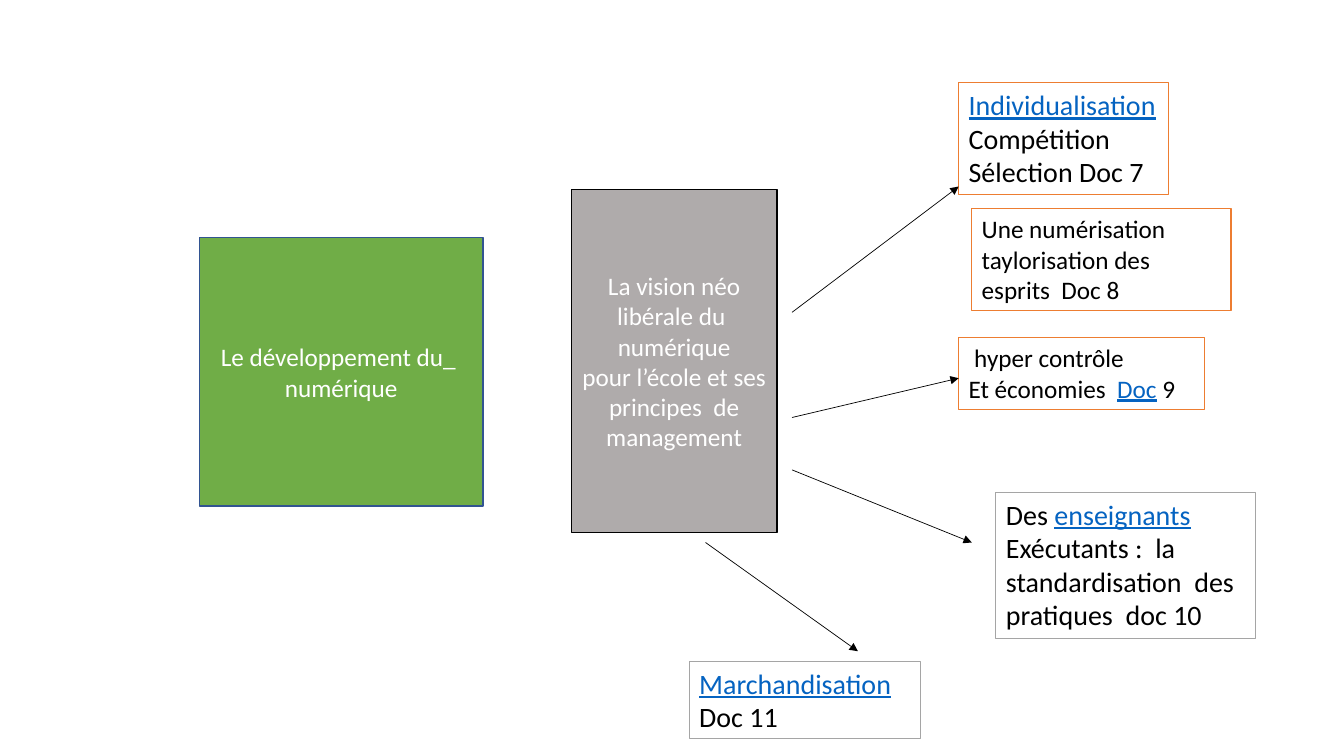
from dataclasses import dataclass
from typing import NamedTuple

from lxml.etree import SubElement
from pptx import Presentation
from pptx.dml.color import RGBColor
from pptx.enum.shapes import MSO_CONNECTOR, MSO_SHAPE
from pptx.enum.text import MSO_ANCHOR, MSO_AUTO_SIZE, PP_ALIGN
from pptx.oxml.ns import qn
from pptx.slide import Slide
from pptx.util import Cm, Pt

HUES = {
    "white": "FFFFFF",
    "black": "000000",
    "gray": "AFABAB",
    "green": "70AD47",
    "navy": "325491",
    "orange": "ED7D31",
    "silver": "A5A5A5",
    "link": "0563C1",
}


class Run(NamedTuple):
    text: str
    link: bool = False


@dataclass
class Box:
    left: float
    top: float
    width: float
    height: float
    paras: list[list[Run]]
    size: int = 18
    line: str = "orange"
    weight: float = 0.75
    fill: str = ""
    ink: str = "black"
    wrap: bool = True
    center: bool = False


class Arrow(NamedTuple):
    left: float
    top: float
    right: float
    end: float


BOXES = [
    Box(24.16, 2.08, 5.28, 2.82,
        [[Run("Individualisation", True)], [Run("Compétition")], [Run("Sélection Doc 7")]],
        size=20, wrap=False),
    Box(14.4, 4.78, 5.18, 8.64,
        [[Run("La vision néo libérale du  numérique")],
         [Run("pour l’école et ses principes  de management")]],
        line="black", weight=1, fill="gray", ink="white", center=True),
    Box(24.16, 8.51, 6.2, 1.8,
        [[Run(" hyper contrôle")],
         [Run("Et économies  "), Run("Doc", True), Run(" 9")]]),
    Box(25.1, 12.4, 6.53, 3.68,
        [[Run("Des "), Run("enseignants", True)],
         [Run("Exécutants :  la  standardisation  des pratiques  doc 10")]],
        size=20, line="silver"),
    Box(17.37, 16.66, 5.84, 1.96,
        [[Run("Marchandisation", True), Run(" Doc 11")]],
        size=20, line="silver"),
    Box(5.03, 5.99, 7.14, 6.76,
        [[Run("Le développement du_  numérique")]],
        line="navy", weight=1, fill="green", ink="white", center=True),
    Box(24.49, 5.26, 6.53, 2.57,
        [[Run("Une numérisation taylorisation des esprits  Doc 8")]],
        weight=1, fill="white"),
]

ARROWS = [
    Arrow(19.96, 7.87, 24.16, 4.7),
    Arrow(19.96, 10.52, 24.16, 9.53),
    Arrow(19.96, 11.84, 24.49, 13.67),
    Arrow(17.78, 13.67, 21.62, 16.41),
]


def hue(name: str) -> RGBColor:
    return RGBColor.from_string(HUES[name])


def draw_box(slide: Slide, box: Box) -> None:
    shape = slide.shapes.add_shape(
        MSO_SHAPE.RECTANGLE, Cm(box.left), Cm(box.top), Cm(box.width), Cm(box.height))
    shape.shadow.inherit = False
    if box.fill:
        shape.fill.solid()
        shape.fill.fore_color.rgb = hue(box.fill)
    else:
        shape.fill.background()
    shape.line.color.rgb = hue(box.line)
    shape.line.width = Pt(box.weight)
    frame = shape.text_frame
    frame.word_wrap = box.wrap
    frame.vertical_anchor = MSO_ANCHOR.MIDDLE if box.center else MSO_ANCHOR.TOP
    frame.auto_size = MSO_AUTO_SIZE.NONE if box.center else MSO_AUTO_SIZE.SHAPE_TO_FIT_TEXT
    for index, runs in enumerate(box.paras):
        para = frame.add_paragraph() if index else frame.paragraphs[0]
        para.alignment = PP_ALIGN.CENTER if box.center else PP_ALIGN.LEFT
        for item in runs:
            run = para.add_run()
            run.text = item.text
            run.font.name = "Calibri"
            run.font.size = Pt(box.size)
            run.font.underline = item.link
            run.font.color.rgb = hue("link" if item.link else box.ink)


def draw_arrow(slide: Slide, arrow: Arrow) -> None:
    line = slide.shapes.add_connector(
        MSO_CONNECTOR.STRAIGHT, Cm(arrow.left), Cm(arrow.top), Cm(arrow.right), Cm(arrow.end))
    line.line.color.rgb = hue("black")
    line.line.width = Pt(0.5)
    SubElement(line.line._get_or_add_ln(), qn("a:tailEnd"), type="triangle")
    SubElement(line._element.spPr, qn("a:effectLst"))


def main() -> None:
    deck = Presentation()
    deck.slide_width = Cm(33.87)
    deck.slide_height = Cm(19.05)
    slide = deck.slides.add_slide(deck.slide_layouts[6])
    for box in BOXES:
        draw_box(slide, box)
    for arrow in ARROWS:
        draw_arrow(slide, arrow)
    deck.save("out.pptx")


if __name__ == "__main__":
    main()
